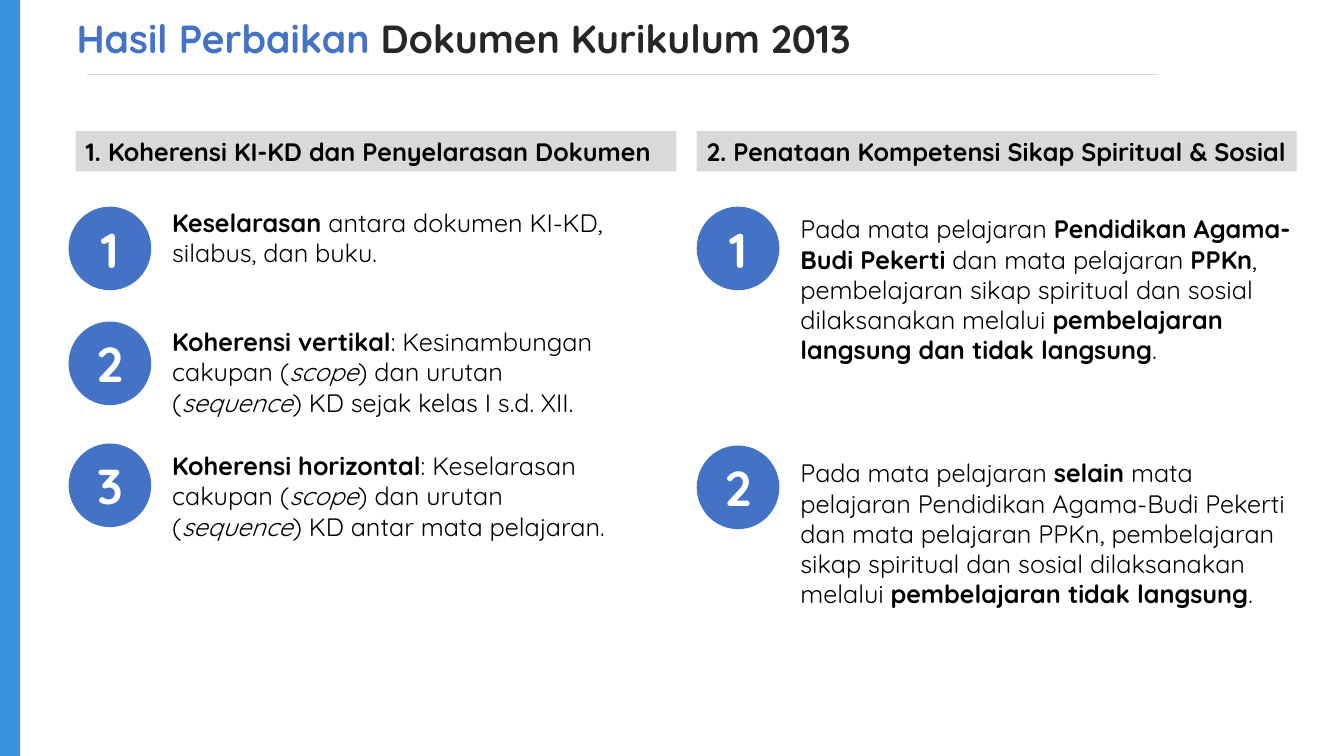
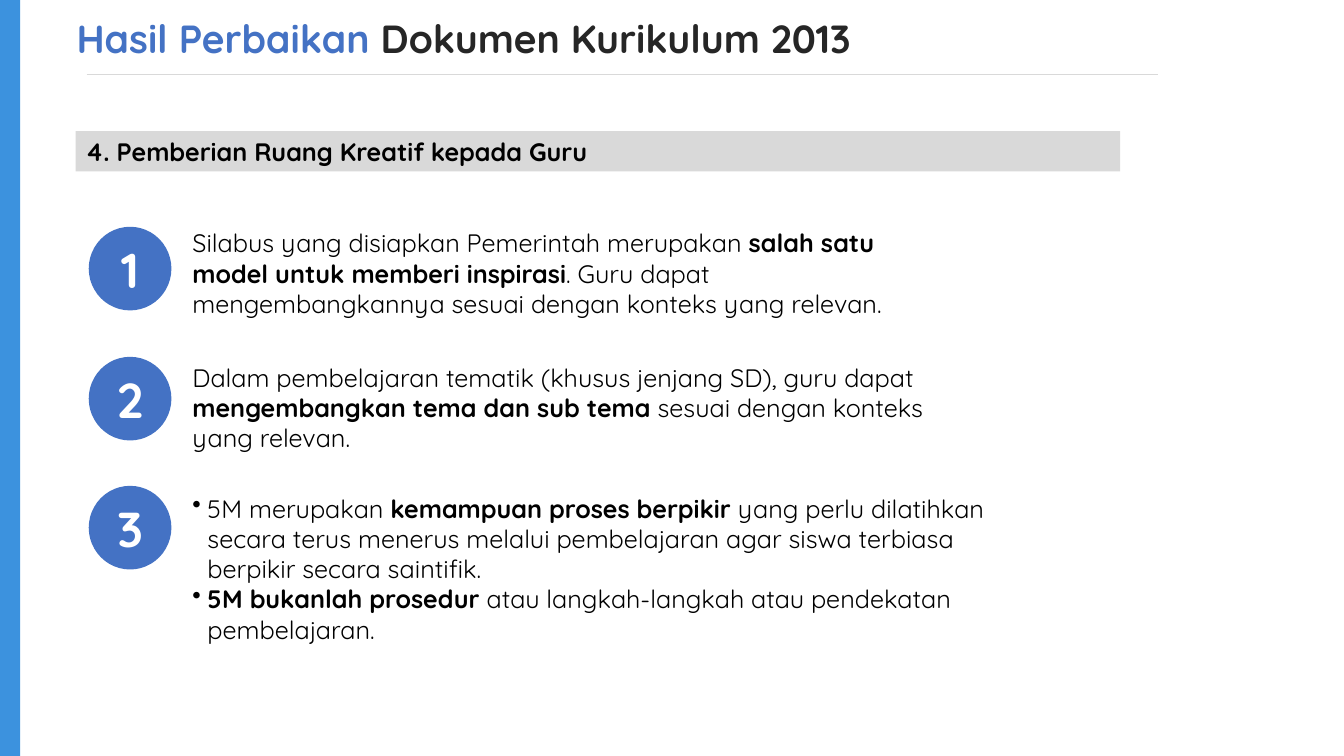
from lxml.etree import SubElement
from pptx import Presentation
from pptx.dml.color import RGBColor
from pptx.enum.shapes import MSO_CONNECTOR as Conn, MSO_SHAPE as Shape
from pptx.enum.text import MSO_ANCHOR as Anchor, PP_ALIGN as Align
from pptx.oxml.ns import qn
from pptx.util import Emu, Pt

# Content: *bold*, _italic_; an item is (circle y, text y, text width, text height, paragraphs)
TITLE = [("Hasil Perbaikan ", "4472C4"), ("Dokumen Kurikulum 2013", "262626")]

SLIDES = [
    [
        {"head": "1. Koherensi KI-KD dan Penyelarasan Dokumen",
         "bar": (75, 596), "wrap": False, "left": 68, "items": [
             (205, 201, 484, 71, ["*Keselarasan* antara dokumen KI-KD, silabus, dan buku."]),
             (319, 319, 477, 101, ["*Koherensi vertikal*: Kesinambungan cakupan (_scope_) dan "
                                   "urutan (_sequence_) KD sejak kelas I s.d. XII."]),
             (440, 442, 461, 131, ["*Koherensi horizontal*: Keselarasan cakupan (_scope_) dan "
                                   "urutan (_sequence_) KD antar mata pelajaran."]),
         ]},
        {"head": "2. Penataan Kompetensi Sikap Spiritual & Sosial",
         "bar": (691, 595), "wrap": False, "left": 691, "items": [
             (205, 207, 515, 192, ["Pada mata pelajaran *Pendidikan Agama-Budi Pekerti* dan mata "
                                   "pelajaran *PPKn*, pembelajaran sikap spiritual dan sosial "
                                   "dilaksanakan melalui *pembelajaran langsung dan tidak "
                                   "langsung*."]),
             (442, 449, 515, 192, ["Pada mata pelajaran *selain* mata pelajaran Pendidikan "
                                   "Agama-Budi Pekerti dan mata pelajaran PPKn, pembelajaran "
                                   "sikap spiritual dan sosial dilaksanakan melalui "
                                   "*pembelajaran tidak langsung*."]),
         ]},
    ],
    [
        {"head": "4. Pemberian Ruang Kreatif kepada Guru",
         "bar": (75, 1036), "wrap": True, "left": 88, "items": [
             (225, 221, 719, 131, ["Silabus yang disiapkan Pemerintah merupakan *salah satu model "
                                   "untuk memberi inspirasi*. Guru dapat mengembangkannya sesuai "
                                   "dengan konteks yang relevan."]),
             (354, 354, 771, 101, ["Dalam pembelajaran tematik (khusus jenjang SD), guru dapat "
                                   "*mengembangkan tema dan sub tema* sesuai dengan konteks yang "
                                   "relevan."]),
             (482, 484, 813, 162, ["5M merupakan *kemampuan proses berpikir* yang perlu dilatihkan "
                                   "secara terus menerus melalui pembelajaran agar siswa terbiasa "
                                   "berpikir secara saintifik.",
                                   "*5M bukanlah prosedur* atau langkah-langkah atau pendekatan "
                                   "pembelajaran."]),
         ]},
    ],
]

# Shared style
FONT = "Quicksand"
BLUE, SIDE, GRAY, BLACK, WHITE = "4472C4", "3C92DE", "D9D9D9", "000000", "FFFFFF"
WIDE, HIGH = 1333, 750
DISC_W, DISC_H, TEXT_DX = 82, 83, 93


def px(n):
    return Emu(n * 9144)


def box(*at):
    return [px(n) for n in at]


def color(code):
    return RGBColor.from_string(code)


def style(font, size, code, bold=None):
    font.name, font.size, font.bold = FONT, Pt(size), bold
    font.color.rgb = color(code)


def block(slide, kind, at, fill):
    shape = slide.shapes.add_shape(kind, *box(*at))
    shape.shadow.inherit = False
    shape.fill.solid()
    shape.fill.fore_color.rgb = color(fill)
    shape.line.fill.background()
    return shape


def label(shape, text, size, code, align):
    para = shape.text_frame.paragraphs[0]
    para.text, para.alignment = text, align
    style(para.font, size, code, True)


def textbox(slide, at):
    frame = slide.shapes.add_textbox(*box(*at)).text_frame
    frame.word_wrap = True
    return frame


def rich(para, text):
    style(para.font, 18, BLACK)
    for i, part in enumerate(text.split("*")):
        for j, bit in enumerate(part.split("_")):
            if bit:
                run = para.add_run()
                run.text = bit
                run.font.bold, run.font.italic = i % 2 == 1, j % 2 == 1


def bullet(para):
    props = para._p.get_or_add_pPr()
    props.set("marL", str(px(15)))
    props.set("indent", str(-px(15)))
    mark = SubElement(props, qn("a:buChar"))
    mark.set("char", "•")
    # The bullet must come before the default run properties
    props.insert(0, mark)


def frame_slide(slide):
    """Rule, side band and title."""
    rule = slide.shapes.add_connector(Conn.STRAIGHT, *box(86, 74, 1149, 74))
    rule.line.color.rgb = color(GRAY)
    rule.line.width = Pt(0.5)
    SubElement(rule._element.spPr, qn("a:effectLst"))
    block(slide, Shape.RECTANGLE, (0, 0, 20, HIGH), SIDE)
    frame = textbox(slide, (68, 10, 1124, 56))
    frame.margin_left = frame.margin_right = px(8)
    frame.margin_top = frame.margin_bottom = px(4)
    for text, code in TITLE:
        run = frame.paragraphs[0].add_run()
        run.text = text
        style(run.font, 28, code, True)


def section(slide, part):
    """Gray heading with numbered items below."""
    x, width = part["bar"]
    bar = block(slide, Shape.RECTANGLE, (x, 130, width, 40), GRAY)
    bar.text_frame.word_wrap = part["wrap"]
    label(bar, part["head"], 18, BLACK, Align.LEFT)
    left = part["left"]
    for num, (disc_y, y, w, h, paras) in enumerate(part["items"], 1):
        frame = textbox(slide, (left + TEXT_DX, y, w, h))
        for i, text in enumerate(paras):
            para = frame.add_paragraph() if i else frame.paragraphs[0]
            rich(para, text)
            if len(paras) > 1:
                bullet(para)
        disc = block(slide, Shape.OVAL, (left, disc_y, DISC_W, DISC_H), BLUE)
        disc.text_frame.vertical_anchor = Anchor.MIDDLE
        label(disc, str(num), 35, WHITE, Align.CENTER)


def main():
    deck = Presentation()
    deck.slide_width, deck.slide_height = box(WIDE, HIGH)
    for parts in SLIDES:
        slide = deck.slides.add_slide(deck.slide_layouts[6])
        frame_slide(slide)
        for part in parts:
            section(slide, part)
    deck.save("out.pptx")


if __name__ == "__main__":
    main()
